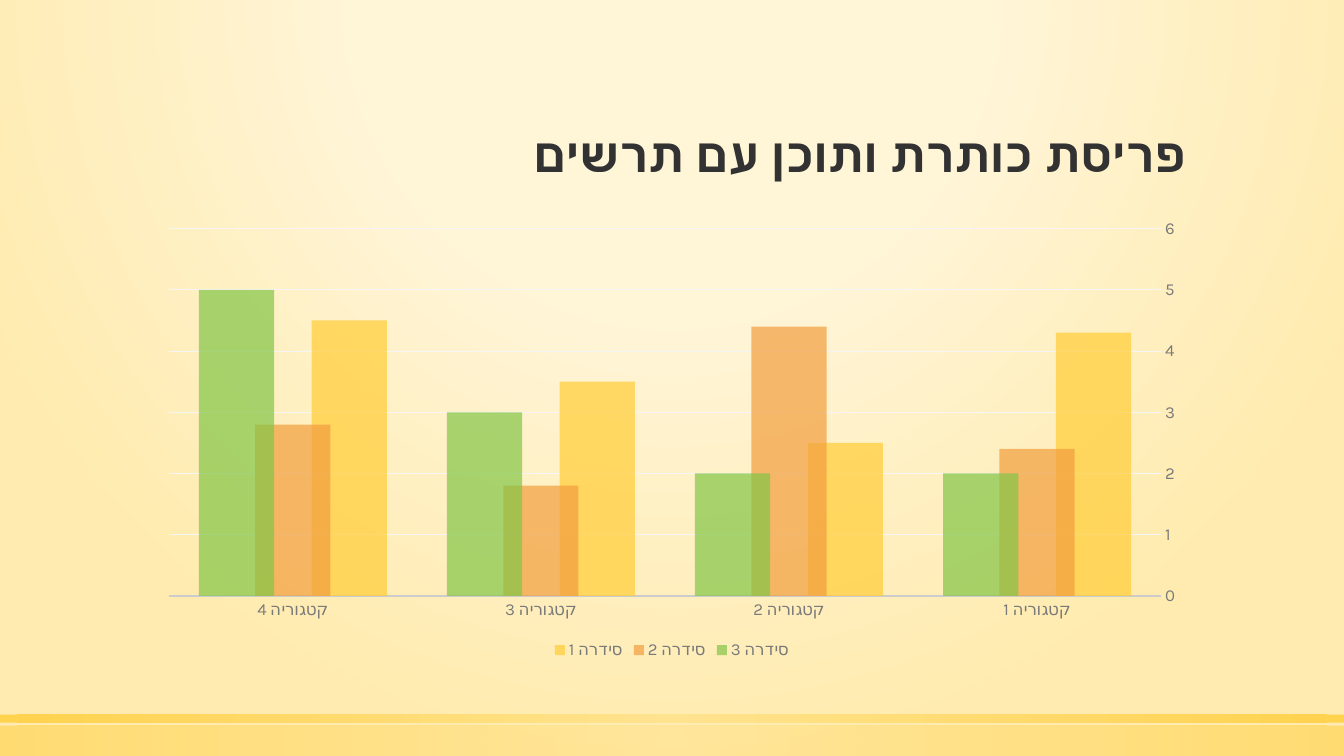
"""Builds a right-to-left title and column chart slide on a warm gradient."""
from lxml import etree
from pptx import Presentation
from pptx.chart.data import CategoryChartData
from pptx.dml.color import RGBColor
from pptx.enum.chart import XL_CHART_TYPE, XL_LEGEND_POSITION, XL_TICK_MARK
from pptx.enum.shapes import MSO_SHAPE
from pptx.enum.text import MSO_ANCHOR, PP_ALIGN
from pptx.oxml.ns import qn
from pptx.util import Inches, Pt

COLUMNS = XL_CHART_TYPE.COLUMN_CLUSTERED
BOTTOM = XL_LEGEND_POSITION.BOTTOM
NO_TICK = XL_TICK_MARK.NONE
RECTANGLE = MSO_SHAPE.RECTANGLE
ANCHOR_BOTTOM = MSO_ANCHOR.BOTTOM
RIGHT = PP_ALIGN.RIGHT

THEME = {
    "font": "Karla", "title_size": Pt(34), "chart_size": Pt(10), "label_size": Pt(12),
    "ink": RGBColor.from_string("323232"), "label": RGBColor.from_string("7A7A7A"),
    "axis": RGBColor.from_string("CCCCCC"), "grid": RGBColor.from_string("F5F5F5"),
    "series": ["FFCD36", "F29E3E", "83C546"], "series_alpha": 70,
    "backdrop": [(0, "FFF5D7", 59), (40, "FFF5D7", 66), (100, "FFEBAF", 100)],
    "band": ["FFE186", "FFCD36"],
}

prs = Presentation()
prs.slide_width, prs.slide_height = Inches(13.33), Inches(7.5)
slide = prs.slides.add_slide(prs.slide_layouts[6])
column, row = prs.slide_width / 100, prs.slide_height / 100


def place(left, top, width, height):
    """Turn cells of a 100 by 100 grid into slide lengths."""
    return [round(n * unit) for n, unit in
            zip((left, top, width, height), (column, row, column, row))]


def fill_radial(fill, owner, stops, top, bottom):
    """Give the owner of a fill a circular gradient of (position, colour, alpha)."""
    fill.gradient()
    gradient = next(owner.iter(qn("a:gradFill")))
    gradient.clear()
    stop_list = etree.SubElement(gradient, qn("a:gsLst"))
    for position, color, alpha in stops:
        stop = etree.SubElement(stop_list, qn("a:gs"), pos=str(position * 1000))
        tone = etree.SubElement(stop, qn("a:srgbClr"), val=color)
        etree.SubElement(tone, qn("a:alpha"), val=str(alpha * 1000))
    circle = etree.SubElement(gradient, qn("a:path"), path="circle")
    etree.SubElement(circle, qn("a:fillToRect"), l="50000", t=str(top * 1000),
                     r="50000", b=str(bottom * 1000))


fill_radial(slide.background.fill, slide.element, THEME["backdrop"], -80, 180)

for top, height, alpha in [(96, 4, 50), (94.53, 1.07, 80)]:
    band = slide.shapes.add_shape(RECTANGLE, *place(0, top, 100, height))
    band.shadow.inherit = False
    band.line.fill.background()
    inner, outer = THEME["band"]
    fill_radial(band.fill, band.element, [(0, inner, alpha), (100, outer, alpha)], 50, 50)

title = slide.shapes.add_textbox(*place(11, 6.8, 78, 18)).text_frame
title.word_wrap = True
title.vertical_anchor = ANCHOR_BOTTOM
heading = title.paragraphs[0]
heading.alignment = RIGHT
heading.line_spacing = 0.9
heading._p.get_or_add_pPr().set("rtl", "1")
heading_run = heading.add_run()
heading_run.text = "פריסת כותרת ותוכן עם תרשים"
heading_run.font.bold = True

series_values = [(4.3, 2.5, 3.5, 4.5), (2.4, 4.4, 1.8, 2.8), (2, 2, 3, 5)]
data = CategoryChartData()
data.categories = [f"קטגוריה {n}" for n in range(1, 5)]
for n, values in enumerate(series_values, 1):
    data.add_series(f"סידרה {n}", values)
chart = slide.shapes.add_chart(COLUMNS, *place(11, 27.73, 78, 60.13), data).chart
chart.has_title = False
chart.has_legend = True
chart.legend.position = BOTTOM
chart.legend.include_in_layout = False

categories, scale = chart.category_axis, chart.value_axis
categories.reverse_order = True
categories.format.line.color.rgb = THEME["axis"]
categories.format.line.width = Pt(1.25)
scale.minimum_scale, scale.maximum_scale, scale.major_unit = 0, 6, 1
scale.format.line.fill.background()
scale.major_gridlines.format.line.color.rgb = THEME["grid"]
scale.major_gridlines.format.line.width = Pt(0.75)
for axis in (categories, scale):
    axis.major_tick_mark = axis.minor_tick_mark = NO_TICK

for font, size, color in [
    (heading_run.font, "title_size", "ink"),
    (chart.font, "chart_size", "ink"),
    (categories.tick_labels.font, "label_size", "label"),
    (scale.tick_labels.font, "label_size", "label"),
    (chart.legend.font, "label_size", "label"),
]:
    font.name = THEME["font"]
    font.size = THEME[size]
    font.color.rgb = THEME[color]

plot = chart.plots[0]
plot.vary_by_categories = False
plot.gap_width, plot.overlap = 80, 25
for series, color in zip(plot.series, THEME["series"]):
    series.invert_if_negative = False
    series.format.fill.solid()
    series.format.fill.fore_color.rgb = RGBColor.from_string(color)
    tone = next(series._element.iter(qn("a:srgbClr")))
    etree.SubElement(tone, qn("a:alpha"), val=str(THEME["series_alpha"] * 1000))

for tree in (slide.element, chart.element):
    for latin in list(tree.iter(qn("a:latin"))):
        latin.addnext(etree.Element(qn("a:cs"), typeface=THEME["font"]))

prs.save("out.pptx")
